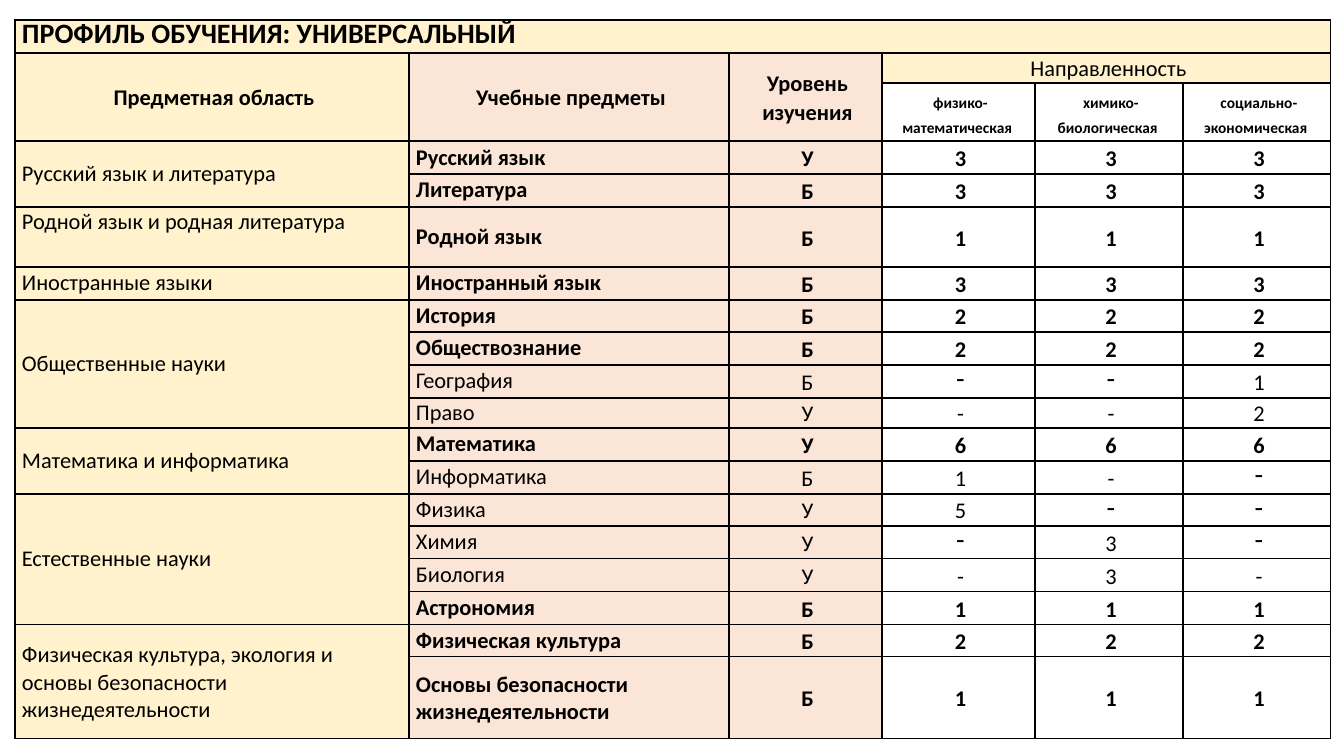
import dataclasses

import lxml.etree
import pptx
import pptx.dml.color
import pptx.enum.text
import pptx.oxml.ns
import pptx.table
import pptx.util

EMU_PER_PX = 914400 / 100.8
CENTER = pptx.enum.text.PP_ALIGN.CENTER
LEFT = pptx.enum.text.PP_ALIGN.LEFT
MIDDLE = pptx.enum.text.MSO_ANCHOR.MIDDLE
TOP = pptx.enum.text.MSO_ANCHOR.TOP


@dataclasses.dataclass(frozen=True)
class Theme:
    font: str = "Calibri"
    ink: str = "000000"
    cream: str = "FFF2CC"
    peach: str = "FBE5D6"
    large: int = 20
    body: int = 16
    small: int = 11
    line_height: int = 20
    border: int = 1


@dataclasses.dataclass(frozen=True)
class Subject:
    name: str
    level: str
    hours: tuple[str, str, str]
    bold: bool = True
    large_dashes: tuple[int, ...] = ()
    height: int = 33


@dataclasses.dataclass(frozen=True)
class Area:
    name: str
    subjects: tuple[Subject, ...]
    anchor: pptx.enum.text.MSO_ANCHOR = MIDDLE


THEME = Theme()
TITLE = "ПРОФИЛЬ ОБУЧЕНИЯ: УНИВЕРСАЛЬНЫЙ"
HEADINGS = ("Предметная область", "Учебные предметы", "Уровень изучения")
DIRECTIONS = (
    "физико-\nматематическая",
    "химико-\nбиологическая",
    "социально-\nэкономическая",
)
AREAS = (
    Area("Русский язык и литература", (
        Subject("Русский язык", "У", ("3", "3", "3")),
        Subject("Литература", "Б", ("3", "3", "3")),
    )),
    Area("Родной язык и родная литература", (
        Subject("Родной язык", "Б", ("1", "1", "1"), height=60),
    ), TOP),
    Area("Иностранные языки", (
        Subject("Иностранный язык", "Б", ("3", "3", "3")),
    )),
    Area("Общественные науки", (
        Subject("История", "Б", ("2", "2", "2"), height=32),
        Subject("Обществознание", "Б", ("2", "2", "2")),
        Subject("География", "Б", ("-", "-", "1"), False, (0, 1)),
        Subject("Право", "У", ("-", "-", "2"), False, height=30),
    )),
    Area("Математика и информатика", (
        Subject("Математика", "У", ("6", "6", "6")),
        Subject("Информатика", "Б", ("1", "-", "-"), False, (2,)),
    )),
    Area("Естественные науки", (
        Subject("Физика", "У", ("5", "-", "-"), False, (1, 2), 32),
        Subject("Химия", "У", ("-", "3", "-"), False, (0, 2)),
        Subject("Биология", "У", ("-", "3", "-"), False),
        Subject("Астрономия", "Б", ("1", "1", "1")),
    )),
    Area("Физическая культура, экология и основы безопасности жизнедеятельности", (
        Subject("Физическая культура", "Б", ("2", "2", "2"), height=32),
        Subject("Основы безопасности жизнедеятельности", "Б", ("1", "1", "1"), height=82),
    )),
)
TABLE_LEFT, TABLE_TOP = 15, 20
COLUMN_WIDTHS = (394, 320, 153, 153, 148, 148)
HEADER_HEIGHTS = (33, 30, 58)
ROW_HEIGHTS = HEADER_HEIGHTS + tuple(
    subject.height for area in AREAS for subject in area.subjects
)


def px(length: float) -> pptx.util.Emu:
    return pptx.util.Emu(round(length * EMU_PER_PX))


def add_borders(cell: pptx.table._Cell) -> None:
    properties = cell._tc.get_or_add_tcPr()
    for index, side in enumerate(("lnL", "lnR", "lnT", "lnB")):
        line = lxml.etree.Element(pptx.oxml.ns.qn(f"a:{side}"))
        line.set("w", str(pptx.util.Pt(THEME.border)))
        fill = lxml.etree.SubElement(line, pptx.oxml.ns.qn("a:solidFill"))
        lxml.etree.SubElement(fill, pptx.oxml.ns.qn("a:srgbClr")).set("val", THEME.ink)
        properties.insert(index, line)


def prepare_cell(cell: pptx.table._Cell, color: str | None) -> None:
    """Give the cell its fill, margins and borders."""
    if color:
        cell.fill.solid()
        cell.fill.fore_color.rgb = pptx.dml.color.RGBColor.from_string(color)
    else:
        cell.fill.background()
    cell.margin_left, cell.margin_top = px(7), px(2)
    cell.margin_right, cell.margin_bottom = px(3), 0
    cell.vertical_anchor = MIDDLE
    add_borders(cell)


def write_cell(
    cell: pptx.table._Cell,
    text: str,
    size: int = THEME.body,
    bold: bool = True,
    align: pptx.enum.text.PP_ALIGN = CENTER,
    strut: bool = False,
) -> None:
    """Write the text; a strut is a closing large space that sets the last baseline."""
    cell.text_frame.text = text
    if strut:
        cell.text_frame.paragraphs[-1].add_run().text = " "
    for paragraph in cell.text_frame.paragraphs:
        paragraph.alignment = align
        paragraph.line_spacing = pptx.util.Pt(THEME.line_height)
        for span in paragraph.runs:
            span.font.name = THEME.font
            span.font.size = pptx.util.Pt(THEME.large if span.text == " " else size)
            span.font.bold = bold
            span.font.color.rgb = pptx.dml.color.RGBColor.from_string(THEME.ink)


def write_header(table: pptx.table.Table) -> None:
    table.cell(0, 0).merge(table.cell(0, 5))
    write_cell(table.cell(0, 0), TITLE, THEME.large, align=LEFT)
    for column, heading in enumerate(HEADINGS):
        table.cell(1, column).merge(table.cell(2, column))
        write_cell(table.cell(1, column), heading)
    table.cell(1, 3).merge(table.cell(1, 5))
    write_cell(table.cell(1, 3), "Направленность", bold=False)
    for column, direction in enumerate(DIRECTIONS, 3):
        write_cell(table.cell(2, column), direction, THEME.small, strut=True)


def write_subject(table: pptx.table.Table, row: int, subject: Subject) -> None:
    write_cell(table.cell(row, 1), subject.name, bold=subject.bold, align=LEFT, strut=True)
    write_cell(table.cell(row, 2), subject.level, bold=subject.bold)
    for index, hours in enumerate(subject.hours):
        size = THEME.large if index in subject.large_dashes else THEME.body
        write_cell(table.cell(row, 3 + index), hours, size, subject.bold)


def write_areas(table: pptx.table.Table) -> None:
    row = len(HEADER_HEIGHTS)
    for area in AREAS:
        cell = table.cell(row, 0)
        if len(area.subjects) > 1:
            cell.merge(table.cell(row + len(area.subjects) - 1, 0))
        write_cell(cell, area.name, bold=False, align=LEFT, strut=True)
        cell.vertical_anchor = area.anchor
        for subject in area.subjects:
            write_subject(table, row, subject)
            row += 1


def main() -> None:
    deck = pptx.Presentation()
    deck.slide_width, deck.slide_height = px(1344), px(756)
    page = deck.slides.add_slide(deck.slide_layouts[6])
    table = page.shapes.add_table(
        len(ROW_HEIGHTS), len(COLUMN_WIDTHS), px(TABLE_LEFT), px(TABLE_TOP),
        px(sum(COLUMN_WIDTHS)), px(sum(ROW_HEIGHTS)),
    ).table
    table.first_row = table.horz_banding = False
    for column, width in zip(table.columns, COLUMN_WIDTHS):
        column.width = px(width)
    column_colors = (THEME.cream, THEME.peach, THEME.peach, None, None, None)
    for index, height in enumerate(ROW_HEIGHTS):
        table.rows[index].height = px(height)
        for column, color in enumerate(column_colors):
            in_cream_band = index == 0 or (index == 1 and column >= 3)
            prepare_cell(table.cell(index, column), THEME.cream if in_cream_band else color)
    write_header(table)
    write_areas(table)
    deck.save("out.pptx")


if __name__ == "__main__":
    main()
